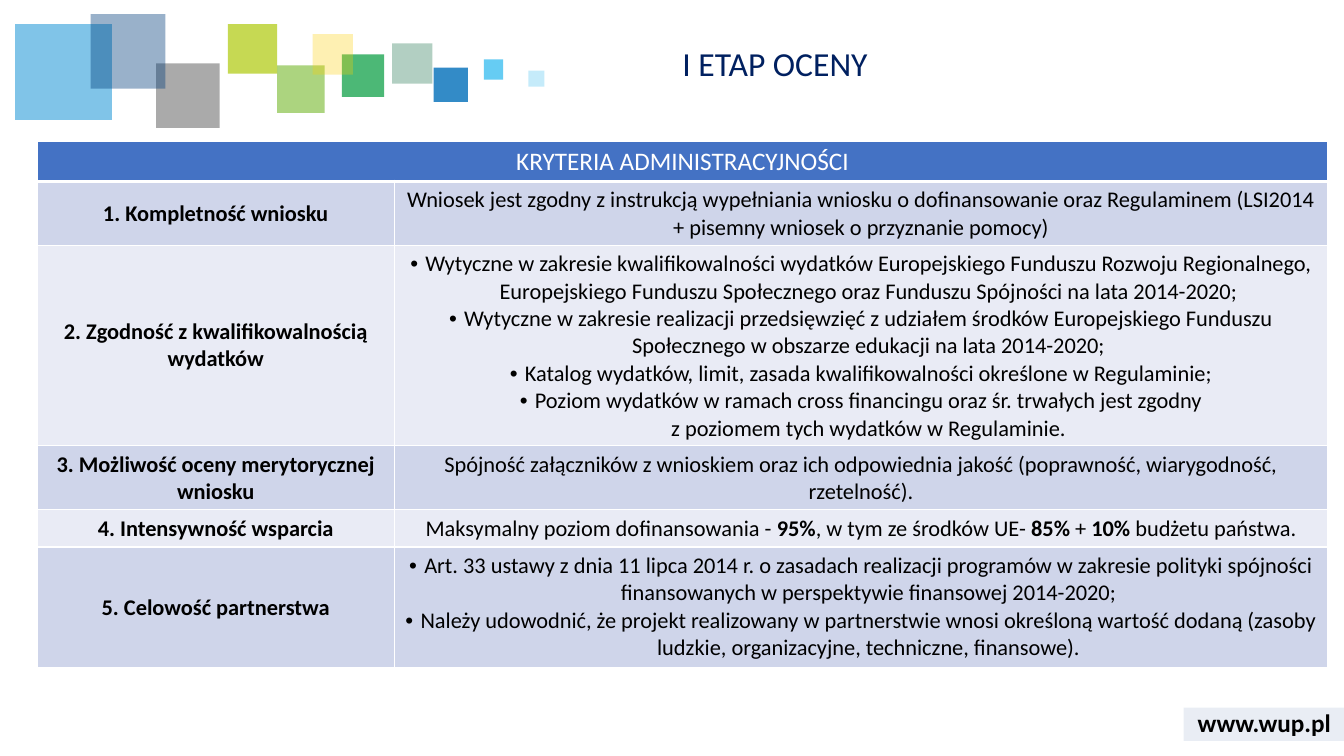
from lxml.etree import SubElement
from pptx import Presentation
from pptx.dml.color import RGBColor
from pptx.enum.shapes import MSO_SHAPE
from pptx.enum.text import MSO_ANCHOR, PP_ALIGN
from pptx.oxml.ns import qn
from pptx.util import Inches, Pt

FONT = "Calibri"
BANDS = ("CFD5EA", "E9EBF5")

# left, top, width, height, colour, opacity in percent
SQUARES = [
    (3.89, 0.43, 0.4, 0.4, "006138", 30),
    (4.3, 0.67, 0.34, 0.34, "006EB9", 80),
    (3.39, 0.54, 0.42, 0.42, "009A3C", 70),
    (0.15, 0.24, 0.96, 0.95, "028BD3", 50),
    (2.75, 0.65, 0.47, 0.47, "75B82A", 60),
    (1.55, 0.63, 0.63, 0.64, "575757", 50),
    (0.9, 0.14, 0.74, 0.74, "003D7C", 40),
    (4.8, 0.59, 0.19, 0.2, "40C0F1", 80),
    (2.26, 0.24, 0.49, 0.49, "AFCA0B", 70),
    (3.1, 0.34, 0.4, 0.4, "FED000", 30),
    (5.24, 0.7, 0.16, 0.16, "40C0F1", 30),
]
ADDRESS_STRIP = (11.74, 7.02, 1.6, 0.33, "2F5597", 10)

COLUMN_WIDTHS = (3.54, 9.26)
ROW_HEIGHTS = (0.4, 0.63, 1.99, 0.63, 0.37, 1.2)

# label and description paragraphs; several paragraphs make a bulleted list
CRITERIA = [
    ("1. Kompletność wniosku", [
        "Wniosek jest zgodny z instrukcją wypełniania wniosku o dofinansowanie "
        "oraz Regulaminem (LSI2014 + pisemny wniosek o przyznanie pomocy)"]),
    ("2. Zgodność z kwalifikowalnością wydatków", [
        "Wytyczne w zakresie kwalifikowalności wydatków Europejskiego Funduszu Rozwoju Regionalnego, "
        "Europejskiego Funduszu Społecznego oraz Funduszu Spójności na lata 2014-2020;",
        "Wytyczne w zakresie realizacji przedsięwzięć z udziałem środków Europejskiego Funduszu "
        "Społecznego w obszarze edukacji na lata 2014-2020;",
        "Katalog wydatków, limit, zasada kwalifikowalności określone w Regulaminie;",
        "Poziom wydatków w ramach cross financingu oraz śr. trwałych jest zgodny\n"
        "z poziomem tych wydatków w Regulaminie."]),
    ("3. Możliwość oceny merytorycznej wniosku", [
        "Spójność załączników z wnioskiem oraz ich odpowiednia jakość "
        "(poprawność, wiarygodność, rzetelność)."]),
    ("4. Intensywność wsparcia", [
        "Maksymalny poziom dofinansowania - **95%**, w tym ze środków UE- "
        "**85%** + **10%** budżetu państwa."]),
    ("5. Celowość partnerstwa", [
        "Art. 33 ustawy z dnia 11 lipca 2014 r. o zasadach realizacji programów w zakresie "
        "polityki spójności finansowanych w perspektywie finansowej 2014-2020;",
        "Należy udowodnić, że projekt realizowany w partnerstwie wnosi określoną wartość dodaną "
        "(zasoby ludzkie, organizacyjne, techniczne, finansowe)."]),
]


def rgb(color):
    return RGBColor.from_string(color)


def style_font(font, size, color):
    font.name = FONT
    font.size = Pt(size)
    font.color.rgb = rgb(color)


def add_rectangle(slide, left, top, width, height, color, opacity):
    shape = slide.shapes.add_shape(MSO_SHAPE.RECTANGLE, Inches(left), Inches(top),
                                   Inches(width), Inches(height))
    shape.shadow.inherit = False
    shape.line.fill.background()
    shape.fill.solid()
    shape.fill.fore_color.rgb = rgb(color)
    fill_color = shape.fill._xPr.find(qn("a:solidFill"))[0]
    SubElement(fill_color, qn("a:alpha"), val=str(opacity * 1000))


def add_text(slide, left, top, width, height, text, size, color):
    """Add a one-line text box and return its text frame."""
    box = slide.shapes.add_textbox(Inches(left), Inches(top), Inches(width), Inches(height))
    frame = box.text_frame
    frame.word_wrap = True
    paragraph = frame.paragraphs[0]
    paragraph.text = text
    style_font(paragraph.font, size, color)
    return frame


def add_bullet(paragraph):
    properties = paragraph._p.get_or_add_pPr()
    properties.set("marL", str(Inches(0.15)))
    properties.set("indent", str(Inches(-0.15)))
    SubElement(properties, qn("a:buFont"), typeface="Arial")
    SubElement(properties, qn("a:buChar"), char="•")


def add_marked_runs(paragraph, text):
    """Add text in which ** marks switch bold on and off and newlines break lines."""
    for index, part in enumerate(text.split("**")):
        for line_number, line in enumerate(part.split("\n")):
            if line_number:
                paragraph.add_line_break()
            run = paragraph.add_run()
            run.text = line
            run.font.bold = index % 2 == 1


def style_cell(cell, color, bottom_width=1):
    properties = cell._tc.get_or_add_tcPr()
    for side, width in (("L", 1), ("R", 1), ("T", 1), ("B", bottom_width)):
        border = SubElement(properties, qn(f"a:ln{side}"), w=str(Pt(width)))
        SubElement(SubElement(border, qn("a:solidFill")), qn("a:srgbClr"), val="FFFFFF")
    cell.fill.solid()
    cell.fill.fore_color.rgb = rgb(color)


def fill_cell(cell, paragraphs, size=16, color="000000"):
    frame = cell.text_frame
    for index, text in enumerate(paragraphs):
        paragraph = frame.add_paragraph() if index else frame.paragraphs[0]
        if len(paragraphs) > 1:
            add_bullet(paragraph)
        paragraph.alignment = PP_ALIGN.CENTER
        style_font(paragraph.font, size, color)
        add_marked_runs(paragraph, text)


def add_criteria_table(slide):
    table = slide.shapes.add_table(len(ROW_HEIGHTS), len(COLUMN_WIDTHS), Inches(0.37), Inches(1.4),
                                   Inches(sum(COLUMN_WIDTHS)), Inches(sum(ROW_HEIGHTS))).table
    for column, width in zip(table.columns, COLUMN_WIDTHS):
        column.width = Inches(width)
    for row, height in zip(table.rows, ROW_HEIGHTS):
        row.height = Inches(height)

    header = table.cell(0, 0)
    header.merge(table.cell(0, 1))
    style_cell(header, "4472C4", bottom_width=3)
    fill_cell(header, ["KRYTERIA ADMINISTRACYJNOŚCI"], 18, "FFFFFF")

    for row_number, (label, descriptions) in enumerate(CRITERIA, start=1):
        label_cell, description_cell = table.rows[row_number].cells
        for cell in (label_cell, description_cell):
            style_cell(cell, BANDS[(row_number - 1) % 2])
        label_cell.vertical_anchor = MSO_ANCHOR.MIDDLE
        fill_cell(label_cell, [f"**{label}**"])
        fill_cell(description_cell, descriptions)


def main():
    presentation = Presentation()
    presentation.slide_width = Inches(13.33)
    presentation.slide_height = Inches(7.5)
    slide = presentation.slides.add_slide(presentation.slide_layouts[6])

    for rectangle in SQUARES + [ADDRESS_STRIP]:
        add_rectangle(slide, *rectangle)

    address = add_text(slide, 11.74, 6.97, 1.6, 0.4, "www.wup.pl", 18, "000000")
    address.vertical_anchor = MSO_ANCHOR.MIDDLE
    address.paragraphs[0].alignment = PP_ALIGN.CENTER
    address.paragraphs[0].font.bold = True

    add_criteria_table(slide)

    title = add_text(slide, 6.67, 0.42, 6.36, 0.55, "I ETAP OCENY", 24, "002060")
    title.paragraphs[0].line_spacing = 0.9

    presentation.save("out.pptx")


if __name__ == "__main__":
    main()
